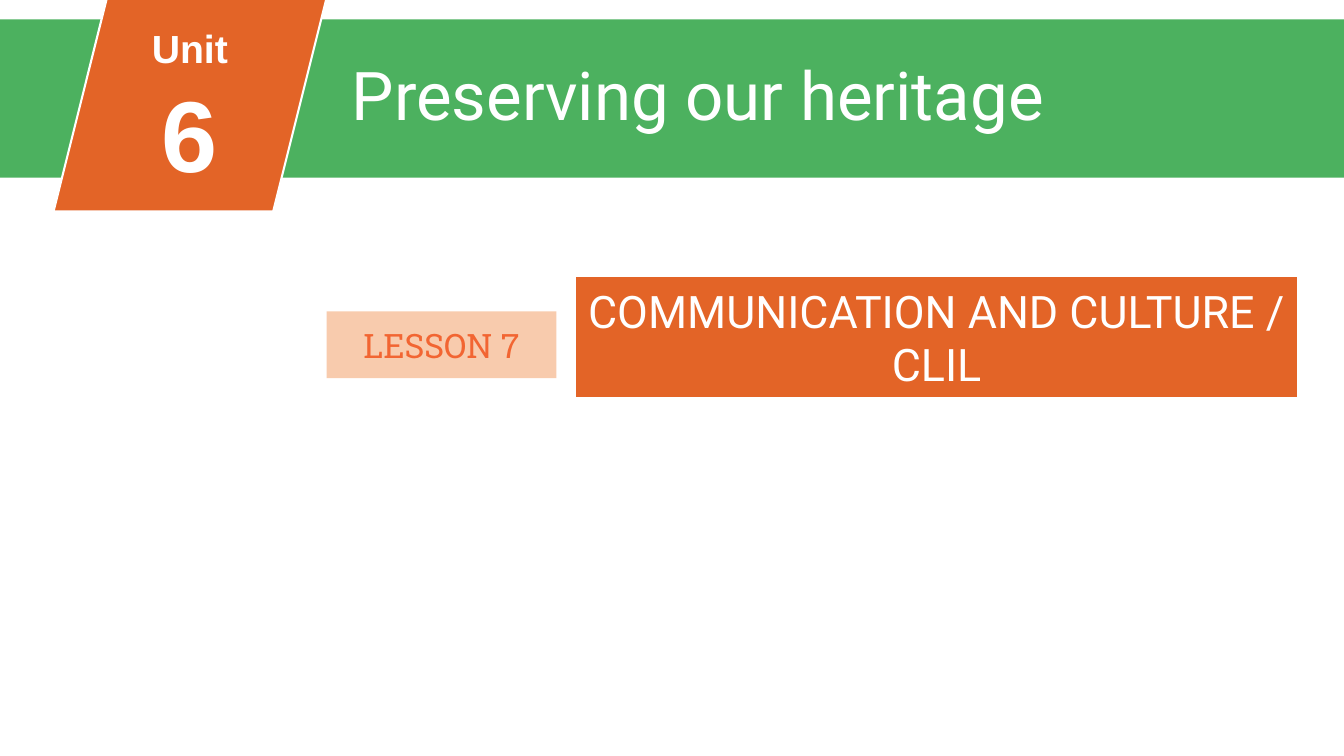
from pptx import Presentation
from pptx.dml.color import RGBColor
from pptx.enum.shapes import MSO_SHAPE
from pptx.enum.text import MSO_ANCHOR, MSO_AUTO_SIZE, PP_ALIGN
from pptx.util import Cm, Pt

RECTANGLE = MSO_SHAPE.RECTANGLE
PARALLELOGRAM = MSO_SHAPE.PARALLELOGRAM
LEFT, CENTER = PP_ALIGN.LEFT, PP_ALIGN.CENTER
TOP, MIDDLE = MSO_ANCHOR.TOP, MSO_ANCHOR.MIDDLE
NO_AUTOFIT = MSO_AUTO_SIZE.NONE
WHITE = RGBColor(0xFF, 0xFF, 0xFF)
ORANGE = RGBColor(0xE3, 0x64, 0x27)
GREEN = RGBColor(0x4C, 0xB1, 0x5F)
PEACH = RGBColor(0xF8, 0xCB, 0xAD)
CORAL = RGBColor(0xF2, 0x65, 0x32)
TITLE_ONLY = 5
SLIDE_WIDTH, SLIDE_HEIGHT = 33.87, 19.05


class UnitPage:
    """Draws the elements of a unit opening slide in one style."""

    def __init__(self, deck):
        self.page = deck.slides.add_slide(deck.slide_layouts[TITLE_ONLY])
        self.heading_font = "Roboto"
        self.label_font = "Roboto Slab"
        self.badge_font = "Arial"
        self.outline = Pt(1.5)

    def set_text(self, shape, lines, font, color, align=CENTER, anchor=MIDDLE, bold=False):
        frame = shape.text_frame
        frame.text = "\n".join(text for text, size in lines)
        frame.word_wrap = True
        frame.auto_size = NO_AUTOFIT
        frame.vertical_anchor = anchor
        for para, (text, size) in zip(frame.paragraphs, lines):
            para.alignment = align
            for span in para.runs:
                span.font.name = font
                span.font.size = Pt(size)
                span.font.bold = bold
                span.font.color.rgb = color

    def block(self, kind, left, top, width, height, fill, outlined=False):
        box = self.page.shapes.add_shape(kind, Cm(left), Cm(top), Cm(width), Cm(height))
        box.shadow.inherit = False
        box.fill.solid()
        box.fill.fore_color.rgb = fill
        if outlined:
            box.line.color.rgb = WHITE
            box.line.width = self.outline
        else:
            box.line.fill.background()
        return box

    def title(self, left, top, width, height, text):
        title = self.page.shapes.title
        title.left, title.top, title.width, title.height = Cm(left), Cm(top), Cm(width), Cm(height)
        self.set_text(title, [(text, 48)], self.heading_font, WHITE, LEFT, TOP)
        title.element.getparent().append(title.element)

    def badge_text(self, left, top, width, height, lines):
        box = self.page.shapes.add_textbox(Cm(left), Cm(top), Cm(width), Cm(height))
        self.set_text(box, lines, self.badge_font, WHITE, bold=True)


def main():
    deck = Presentation()
    deck.slide_width, deck.slide_height = Cm(SLIDE_WIDTH), Cm(SLIDE_HEIGHT)
    unit = UnitPage(deck)

    topic = unit.block(RECTANGLE, 14.5, 6.96, 18.21, 3.07, ORANGE, outlined=True)
    unit.set_text(topic, [("COMMUNICATION AND CULTURE / CLIL", 32)], unit.heading_font, WHITE)
    lesson = unit.block(RECTANGLE, 8.23, 7.85, 5.79, 1.68, PEACH)
    unit.set_text(lesson, [("LESSON 7", 24)], unit.label_font, CORAL)

    unit.block(RECTANGLE, 0, 0.49, SLIDE_WIDTH, 3.99, GREEN)
    unit.block(PARALLELOGRAM, 1.35, -0.05, 6.88, 5.38, ORANGE, outlined=True)
    unit.title(8.61, 1.22, 22.58, 2.31, "Preserving our heritage")
    unit.badge_text(3.02, 0.48, 3.53, 4.52, [("Unit", 28), ("6", 72)])

    deck.save("out.pptx")


if __name__ == "__main__":
    main()
